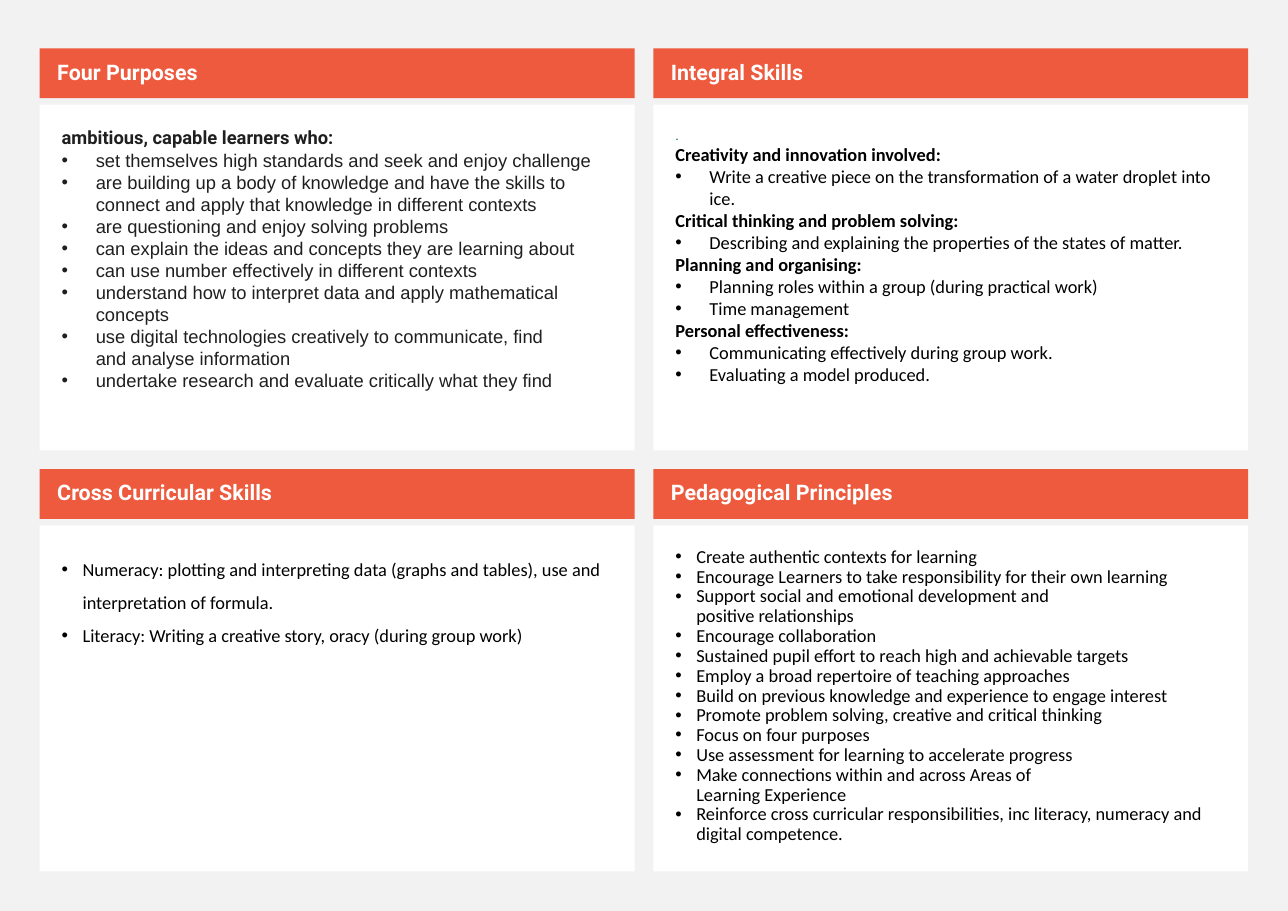
from dataclasses import dataclass

from lxml import etree
from pptx import Presentation
from pptx import util as u
from pptx.dml.color import RGBColor
from pptx.enum import shapes, text
from pptx.oxml import ns


@dataclass(frozen=True)
class Theme:
    page: str = "F2F2F2"
    banner: str = "ED5A3E"
    white: str = "FFFFFF"
    ink: str = "1F1F1F"
    black: str = "000000"
    green: str = "006758"
    title_size: int = 14
    body_size: int = 12
    small_size: int = 9
    display: str = "Roboto"
    plain: str = "Arial"
    reading: str = "Calibri"


THEME = Theme()
PANEL_WIDTH, BANNER_HEIGHT, CARD_HEIGHT = 5.4, 0.45, 3.14
LEFT, TOP, CARD_DROP = 0.36, 0.44, 0.51
COLUMN_STEP, ROW_STEP = 5.57, 3.82

FOUR_PURPOSES = [
    ("ambitious, capable learners who:", [
        "set themselves high standards and seek and enjoy challenge",
        "are building up a body of knowledge and have the skills to connect and apply "
        "that knowledge in different contexts",
        "are questioning and enjoy solving problems",
        "can explain the ideas and concepts they are learning about",
        "can use number effectively in different contexts",
        "understand how to interpret data and apply mathematical concepts",
        "use digital technologies creatively to communicate, find\vand analyse information",
        "undertake research and evaluate critically what they find",
    ]),
]
INTEGRAL_SKILLS = [
    ("Creativity and innovation involved:", [
        "Write a creative piece on the transformation of a water droplet into ice.",
    ]),
    ("Critical thinking and problem solving:", [
        "Describing and explaining the properties of the states of matter.",
    ]),
    ("Planning and organising:", [
        "Planning roles within a group (during practical work)",
        "Time management",
    ]),
    ("Personal effectiveness:", [
        "Communicating effectively during group work.",
        "Evaluating a model produced.",
    ]),
]
CROSS_CURRICULAR = [
    (None, [
        "Numeracy: plotting and interpreting data (graphs and tables), use and "
        "interpretation of formula.",
        "Literacy: Writing a creative story, oracy (during group work)",
    ]),
]
PEDAGOGICAL = [
    (None, [
        "Create authentic contexts for learning",
        "Encourage Learners to take responsibility for their own learning",
        "Support social and emotional development and\vpositive relationships",
        "Encourage collaboration",
        "Sustained pupil effort to reach high and achievable targets",
        "Employ a broad repertoire of teaching approaches",
        "Build on previous knowledge and experience to engage interest",
        "Promote problem solving, creative and critical thinking",
        "Focus on four purposes",
        "Use assessment for learning to accelerate progress",
        "Make connections within and across Areas of\vLearning Experience",
        "Reinforce cross curricular responsibilities, inc literacy, numeracy and "
        "digital competence.",
    ]),
]


def write(frame, wording, *, font=THEME.reading, size=THEME.body_size, color=THEME.black,
          bold=False, hang=0, spacing=None, before=None):
    first = frame.paragraphs[0]
    line = frame.add_paragraph() if first.runs else first
    line.text = wording
    line.alignment = text.PP_ALIGN.LEFT
    if spacing:
        line.line_spacing = spacing
    if before:
        line.space_before = u.Pt(before)
    for run in line.runs:
        run.font.name = font
        run.font.size = u.Pt(size)
        run.font.bold = bold
        run.font.color.rgb = RGBColor.from_string(color)
    if hang:
        properties = line._p.get_or_add_pPr()
        properties.set("marL", str(u.Inches(hang)))
        properties.set("indent", str(-u.Inches(hang)))
        etree.SubElement(properties, ns.qn("a:buFont")).set("typeface", THEME.plain)
        etree.SubElement(properties, ns.qn("a:buChar")).set("char", "•")


class PanelSlide:
    """Draw titled panels on one slide in a shared style."""

    def __init__(self, slide, theme):
        self.slide, self.theme = slide, theme
        slide.background.fill.solid()
        slide.background.fill.fore_color.rgb = RGBColor.from_string(theme.page)

    def block(self, left, top, height, fill, anchor, insets):
        box = self.slide.shapes.add_shape(
            shapes.MSO_SHAPE.RECTANGLE, u.Inches(left), u.Inches(top),
            u.Inches(PANEL_WIDTH), u.Inches(height))
        box.shadow.inherit = False
        box.fill.solid()
        box.fill.fore_color.rgb = RGBColor.from_string(fill)
        box.line.fill.background()
        frame = box.text_frame
        frame.word_wrap = True
        frame.vertical_anchor = anchor
        (frame.margin_left, frame.margin_top,
         frame.margin_right, frame.margin_bottom) = map(u.Inches, insets)
        return frame

    def banner(self, left, top, title):
        frame = self.block(left, top, BANNER_HEIGHT, self.theme.banner,
                           text.MSO_ANCHOR.MIDDLE, (0.16, 0.05, 0.1, 0.05))
        write(frame, title, font=self.theme.display, size=self.theme.title_size,
              color=self.theme.white, bold=True, spacing=0.9, before=11)

    def card(self, left, top, groups, lead=None, heading_font=THEME.reading, **bullet):
        frame = self.block(left, top, CARD_HEIGHT, self.theme.white,
                           text.MSO_ANCHOR.TOP, (0.2,) * 4)
        if lead:
            write(frame, lead, font=self.theme.display, size=self.theme.small_size,
                  color=self.theme.green)
        for heading, items in groups:
            if heading:
                write(frame, heading, font=heading_font, bold=True,
                      color=bullet.get("color", self.theme.black))
            for item in items:
                write(frame, item, **bullet)

    def panel(self, column, row, title, groups, **card_style):
        left, top = LEFT + column * COLUMN_STEP, TOP + row * ROW_STEP
        self.card(left, top + CARD_DROP, groups, **card_style)
        self.banner(left, top, title)


def main():
    deck = Presentation()
    deck.slide_width, deck.slide_height = u.Inches(11.69), u.Inches(8.27)
    overview = PanelSlide(deck.slides.add_slide(deck.slide_layouts[6]), THEME)
    overview.panel(0, 0, "Four Purposes", FOUR_PURPOSES, heading_font=THEME.display,
                   font=THEME.plain, color=THEME.ink, hang=0.31)
    overview.panel(1, 0, "Integral Skills", INTEGRAL_SKILLS, lead=".", hang=0.31)
    overview.panel(0, 1, "Cross Curricular Skills", CROSS_CURRICULAR, hang=0.19, spacing=1.5)
    overview.panel(1, 1, "Pedagogical Principles", PEDAGOGICAL, hang=0.19, spacing=0.9)
    deck.save("out.pptx")


if __name__ == "__main__":
    main()
